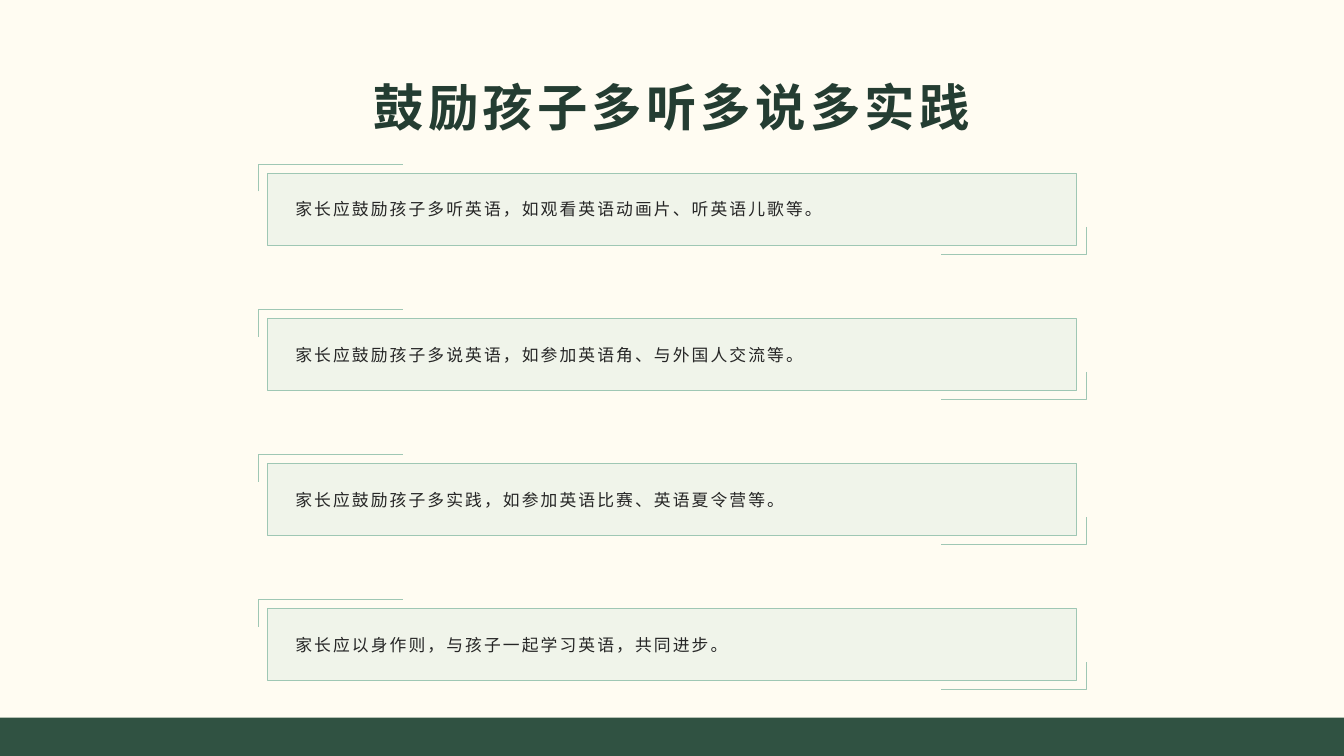
from dataclasses import dataclass

from lxml.etree import SubElement
from pptx import Presentation
from pptx.dml.color import RGBColor
from pptx.enum.shapes import MSO_SHAPE
from pptx.enum.text import MSO_ANCHOR, MSO_AUTO_SIZE, PP_ALIGN
from pptx.oxml.ns import qn
from pptx.util import Inches, Pt

TITLE = "鼓励孩子多听多说多实践"
TIPS = [
    "家长应鼓励孩子多听英语，如观看英语动画片、听英语儿歌等。",
    "家长应鼓励孩子多说英语，如参加英语角、与外国人交流等。",
    "家长应鼓励孩子多实践，如参加英语比赛、英语夏令营等。",
    "家长应以身作则，与孩子一起学习英语，共同进步。",
]


@dataclass(frozen=True)
class Theme:
    font: str = "Noto Sans CJK SC"
    background: str = "FFFCF2"
    footer: str = "305242"
    title: str = "243D32"
    text: str = "262626"
    card: str = "CFE3DA"
    card_opacity: int = 30
    line: str = "9FC7B4"
    line_width: float = 0.5
    title_size: int = 36
    text_size: int = 12
    title_spacing: float = 3
    text_spacing: float = 1.5


THEME = Theme()
PAGE_WIDTH, PAGE_HEIGHT = 13.33, 7.5
FOOTER_HEIGHT = 0.38
TITLE_MARGIN, TITLE_HEIGHT = 0.67, 0.77
CARD_WIDTH, CARD_HEIGHT = 8.03, 0.71
CARD_LEFT = (PAGE_WIDTH - CARD_WIDTH) / 2
FIRST_TOP, ROW_PITCH = 1.72, 1.44
BRACKET_GAP, BRACKET_WIDTH, BRACKET_HEIGHT = 0.09, 1.44, 0.27


def colour(value):
    return RGBColor.from_string(value)


def write(shape, text, size, tint, spacing, align, bold=False):
    frame = shape.text_frame
    frame.text = text
    frame.word_wrap = True
    frame.auto_size = MSO_AUTO_SIZE.NONE
    frame.vertical_anchor = MSO_ANCHOR.MIDDLE
    para = frame.paragraphs[0]
    para.alignment = align
    span = para.runs[0]
    span.font.size = Pt(size)
    span.font.bold = bold
    span.font.color.rgb = colour(tint)
    span.font.name = THEME.font
    properties = span.font._element
    properties.set("spc", str(round(spacing * 100)))
    SubElement(properties, qn("a:ea")).set("typeface", THEME.font)


def outline(shape):
    shape.shadow.inherit = False
    shape.line.color.rgb = colour(THEME.line)
    shape.line.width = Pt(THEME.line_width)


def add_rectangle(page, left, top, width, height, fill):
    box = page.shapes.add_shape(
        MSO_SHAPE.RECTANGLE, *map(Inches, (left, top, width, height)))
    box.shadow.inherit = False
    box.fill.solid()
    box.fill.fore_color.rgb = colour(fill)
    return box


def add_bracket(page, x, y, direction):
    """Draw a corner at (x, y); direction 1 opens right and down, -1 left and up."""
    builder = page.shapes.build_freeform(
        Inches(x), Inches(y + direction * BRACKET_HEIGHT))
    builder.add_line_segments(
        [(Inches(x), Inches(y)),
         (Inches(x + direction * BRACKET_WIDTH), Inches(y))], close=False)
    bracket = builder.convert_to_shape()
    bracket.fill.background()
    outline(bracket)


def add_card(page, top, text):
    card = add_rectangle(page, CARD_LEFT, top, CARD_WIDTH, CARD_HEIGHT, THEME.card)
    tint = card.fill._xPr.find(qn("a:solidFill"))[0]
    SubElement(tint, qn("a:alpha")).set("val", str(THEME.card_opacity * 1000))
    outline(card)
    write(card, text, THEME.text_size, THEME.text, THEME.text_spacing, PP_ALIGN.LEFT)
    card.text_frame.margin_left = Inches(0.28)
    add_bracket(page, CARD_LEFT - BRACKET_GAP, top - BRACKET_GAP, 1)
    add_bracket(page, CARD_LEFT + CARD_WIDTH + BRACKET_GAP,
                top + CARD_HEIGHT + BRACKET_GAP, -1)


def main():
    deck = Presentation()
    deck.slide_width, deck.slide_height = Inches(PAGE_WIDTH), Inches(PAGE_HEIGHT)
    page = deck.slides.add_slide(deck.slide_layouts.get_by_name("Title Only"))
    page.background.fill.solid()
    page.background.fill.fore_color.rgb = colour(THEME.background)

    footer = add_rectangle(page, 0, PAGE_HEIGHT - FOOTER_HEIGHT,
                           PAGE_WIDTH, FOOTER_HEIGHT, THEME.footer)
    footer.line.fill.background()

    title = page.shapes.title
    title.left = title.top = Inches(TITLE_MARGIN)
    title.width = Inches(PAGE_WIDTH - 2 * TITLE_MARGIN)
    title.height = Inches(TITLE_HEIGHT)
    write(title, TITLE, THEME.title_size, THEME.title, THEME.title_spacing,
          PP_ALIGN.CENTER, bold=True)

    for row, tip in enumerate(TIPS):
        add_card(page, FIRST_TOP + row * ROW_PITCH, tip)
    deck.save("out.pptx")


if __name__ == "__main__":
    main()
